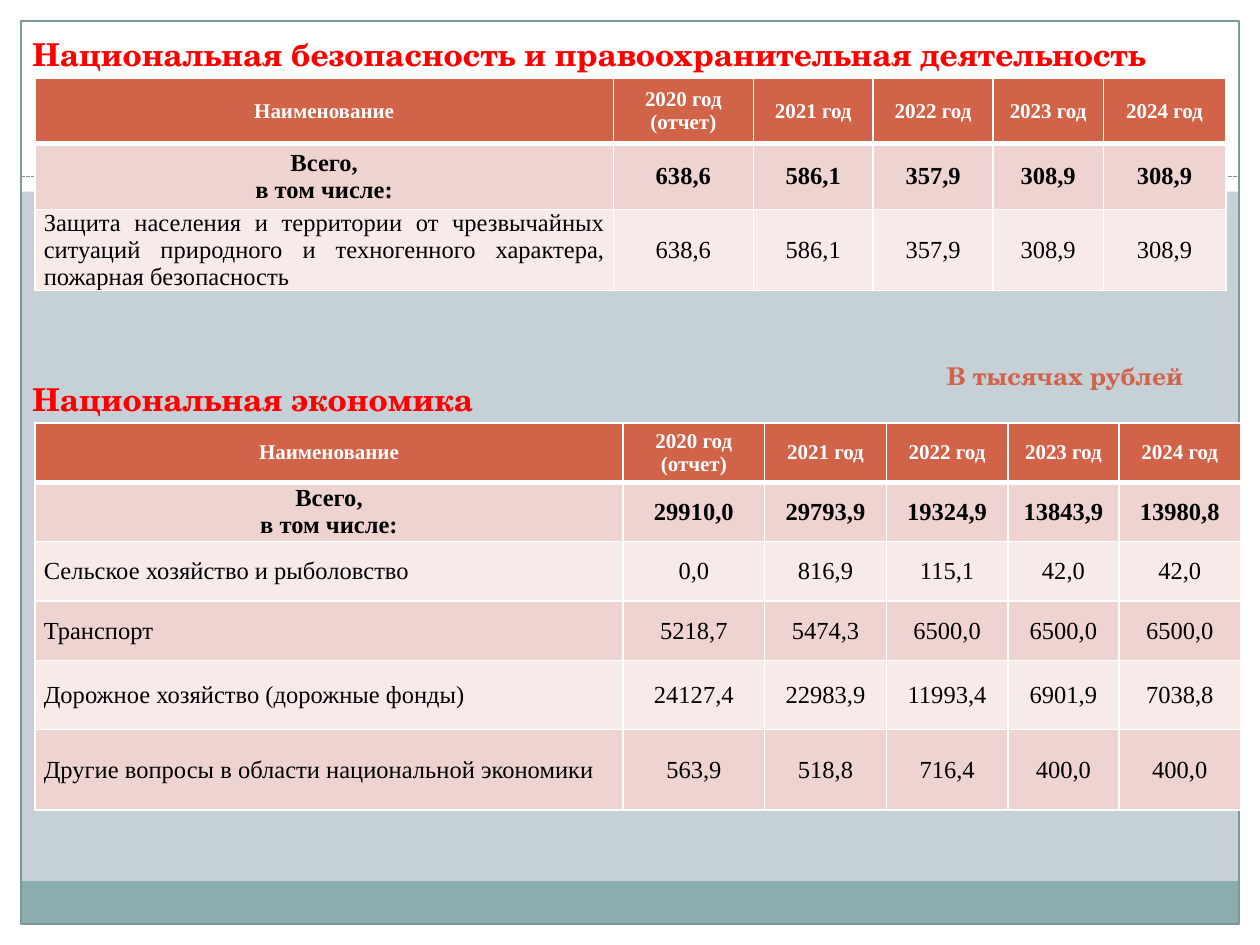
from lxml.etree import SubElement
from pptx import Presentation
from pptx.dml.color import RGBColor
from pptx.enum.dml import MSO_LINE
from pptx.enum.shapes import MSO_CONNECTOR, MSO_SHAPE
from pptx.enum.text import MSO_ANCHOR, MSO_AUTO_SIZE, PP_ALIGN
from pptx.oxml import parse_xml
from pptx.oxml.ns import nsdecls, qn
from pptx.util import Pt

WIDTH, HEIGHT, MARGIN = 720, 540, 12
COLORS = {
    "background": "C5D1D7", "white": "FFFFFF", "footer": "8CADAE", "frame": "7C999A",
    "accent": "D16349", "band_dark": "EED3D0", "band_light": "F7EAE9",
    "text": "000000", "heading": "FF0000",
}
HEADING_FONT, TABLE_FONT = "TeX Gyre Schola", "Times New Roman"
HEADER = ["Наименование", "2020 год (отчет)", "2021 год", "2022 год", "2023 год", "2024 год"]
TOTAL = "Всего,\nв том числе:"
SECURITY = [
    HEADER,
    [TOTAL, "638,6", "586,1", "357,9", "308,9", "308,9"],
    ["Защита населения и территории от чрезвычайных ситуаций природного и техногенного "
     "характера, пожарная безопасность", "638,6", "586,1", "357,9", "308,9", "308,9"],
]
ECONOMY = [
    HEADER,
    [TOTAL, "29910,0", "29793,9", "19324,9", "13843,9", "13980,8"],
    ["Сельское хозяйство и рыболовство", "0,0", "816,9", "115,1", "42,0", "42,0"],
    ["Транспорт", "5218,7", "5474,3", "6500,0", "6500,0", "6500,0"],
    ["Дорожное хозяйство (дорожные фонды)", "24127,4", "22983,9", "11993,4", "6901,9", "7038,8"],
    ["Другие вопросы в области национальной экономики",
     "563,9", "518,8", "716,4", "400,0", "400,0"],
]


def color(name):
    """Return the palette colour with the given name."""
    return RGBColor.from_string(COLORS[name])


def style_font(paragraph, face, size, color_name, bold):
    """Set the font of a whole paragraph."""
    font = paragraph.font
    font.name, font.size, font.bold = face, Pt(size), bold
    font.color.rgb = color(color_name)


def add_rectangle(slide, box, fill=None, line=None):
    """Draw a plain rectangle, filled or outlined."""
    rectangle = slide.shapes.add_shape(MSO_SHAPE.RECTANGLE, *map(Pt, box))
    rectangle.shadow.inherit = False
    if fill:
        rectangle.fill.solid()
        rectangle.fill.fore_color.rgb = color(fill)
    else:
        rectangle.fill.background()
    if line:
        rectangle.line.color.rgb = color(line)
        rectangle.line.width = Pt(0.75)
    else:
        rectangle.line.fill.background()


def add_backdrop(slide, box):
    """Draw the white margins, footer band, frame and dashed divider."""
    left, top, width, height = box
    right, bottom = left + width, top + height
    inner_width, footer_height, divider_y = width - 2 * MARGIN, 24.5, top + 101
    slide.background.fill.solid()
    slide.background.fill.fore_color.rgb = color("background")
    for margin_box in (
        (left, bottom - MARGIN, width, MARGIN),
        (left, top, width, 109.5),
        (left, top, MARGIN, height),
        (right - MARGIN, top, MARGIN, height),
    ):
        add_rectangle(slide, margin_box, fill="white")
    footer_top = bottom - MARGIN - footer_height
    add_rectangle(slide, (left + MARGIN, footer_top, inner_width, footer_height), fill="footer")
    add_rectangle(slide, (left + MARGIN, top + MARGIN, inner_width, height - 2 * MARGIN),
                  line="frame")
    divider = slide.shapes.add_connector(
        MSO_CONNECTOR.STRAIGHT, Pt(left + MARGIN), Pt(divider_y), Pt(right - MARGIN), Pt(divider_y))
    divider.line.color.rgb = color("frame")
    divider.line.width = Pt(0.75)
    divider.line.dash_style = MSO_LINE.SQUARE_DOT
    SubElement(divider.element.spPr, qn("a:effectLst"))


def add_label(slide, box, text, size, color_name, wrap):
    """Place one bold line of heading text."""
    frame = slide.shapes.add_textbox(*map(Pt, box)).text_frame
    frame.word_wrap = wrap
    if not wrap:
        frame.auto_size = MSO_AUTO_SIZE.SHAPE_TO_FIT_TEXT
    frame.text = text
    style_font(frame.paragraphs[0], HEADING_FONT, size, color_name, True)


def set_borders(cell, bottom_width):
    """Give a cell white borders with its own bottom width."""
    properties = cell._tc.get_or_add_tcPr()
    widths = {"lnL": 1, "lnR": 1, "lnT": 1, "lnB": bottom_width}
    for position, (side, width) in enumerate(widths.items()):
        properties.insert(position, parse_xml(
            f'<a:{side} {nsdecls("a")} w="{Pt(width)}"><a:solidFill>'
            f'<a:srgbClr val="{COLORS["white"]}"/></a:solidFill></a:{side}>'))


def fill_cell(cell, text, row, column):
    """Write and style one budget cell according to its row and column."""
    is_header, is_name = row == 0, row > 1 and column == 0
    cell.margin_left = cell.margin_right = Pt(5)
    cell.margin_top = cell.margin_bottom = 0
    cell.vertical_anchor = MSO_ANCHOR.MIDDLE
    band = "band_dark" if row % 2 else "band_light"
    cell.fill.solid()
    cell.fill.fore_color.rgb = color("accent" if is_header else band)
    set_borders(cell, 3 if is_header else 1)
    cell.text = text
    for paragraph in cell.text_frame.paragraphs:
        paragraph.alignment = PP_ALIGN.JUSTIFY if is_name else PP_ALIGN.CENTER
        style_font(paragraph, TABLE_FONT, 12 if is_header else 14,
                   "white" if is_header else "text", row < 2)


def add_budget_table(slide, left, top, rows, widths, heights):
    """Build a budget table from its rows, column widths and row heights."""
    table = slide.shapes.add_table(
        len(rows), len(widths), Pt(left), Pt(top), Pt(sum(widths)), Pt(sum(heights))).table
    table.horz_banding = False
    for column, width in zip(table.columns, widths):
        column.width = Pt(width)
    for table_row, height in zip(table.rows, heights):
        table_row.height = Pt(height)
    for row, texts in enumerate(rows):
        for column, text in enumerate(texts):
            fill_cell(table.cell(row, column), text, row, column)


def add_section(slide, box, title, rows, widths, heights):
    """Place a section: its budget table with the title above it."""
    left, top, title_width, title_height = box
    add_budget_table(slide, left + 8.5, top + 28, rows, widths, heights)
    add_label(slide, (left, top, title_width, title_height), title, 18, "heading", False)


def main():
    """Build the budget slide and save it."""
    presentation = Presentation()
    presentation.slide_width, presentation.slide_height = Pt(WIDTH), Pt(HEIGHT)
    slide = presentation.slides.add_slide(presentation.slide_layouts[6])
    add_backdrop(slide, (0, 0, WIDTH, HEIGHT))
    add_section(slide, (11.5, 16.7, 665, 29),
                "Национальная безопасность и правоохранительная деятельность",
                SECURITY, [330.5, 80, 68.5, 68.5, 63, 70], [37.5] * 3)
    add_section(slide, (11.5, 213.8, 273.5, 29), "Национальная экономика",
                ECONOMY, [336, 81, 69.5, 69.5, 63.5, 69.5], [34, 32, 34, 34, 39.5, 46])
    add_label(slide, (534, 202.5, 163.5, 34), "В тысячах рублей", 14, "accent", True)
    presentation.save("out.pptx")


if __name__ == "__main__":
    main()
